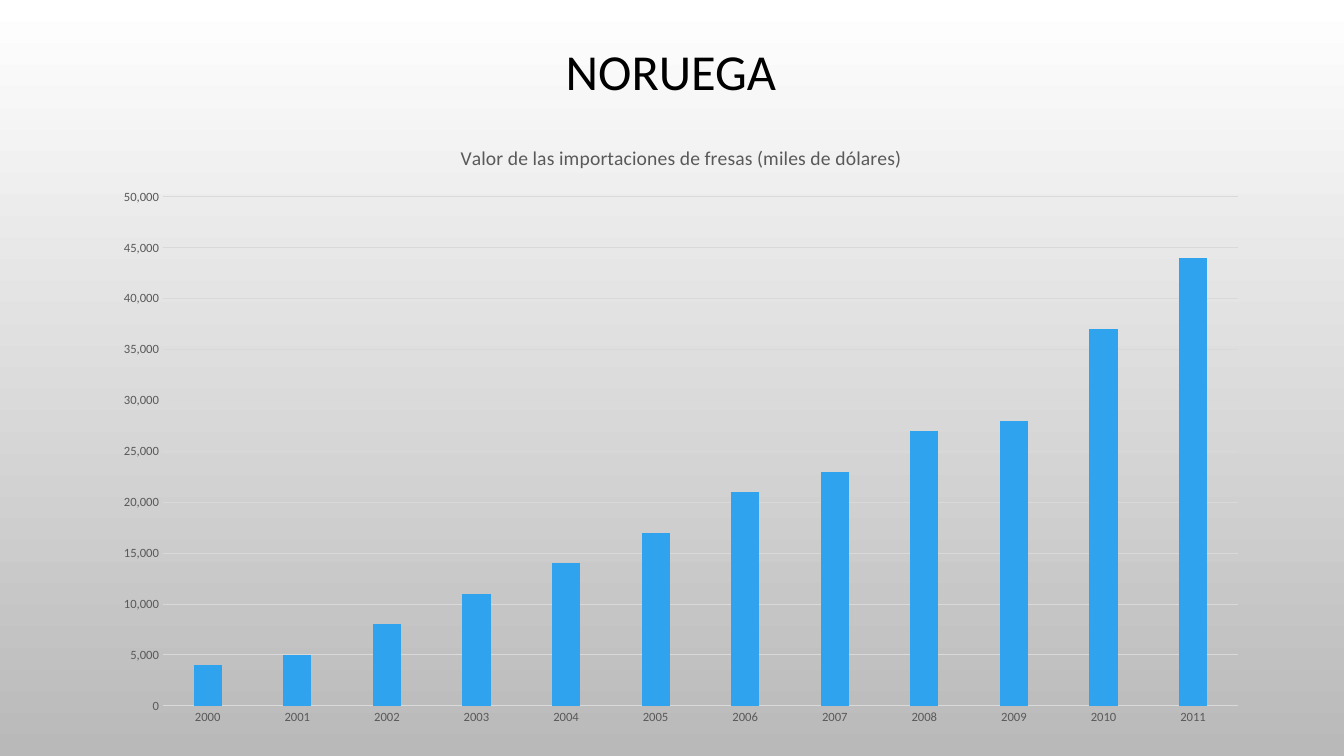
from dataclasses import dataclass

from lxml import etree
from pptx import Presentation
from pptx import util as u
from pptx.chart.data import CategoryChartData
from pptx.dml.color import RGBColor
from pptx.enum import chart as charts, text
from pptx.oxml.ns import qn

PX = u.Inches(1) / 100.8
IMPORTS = {
    2000: 4000, 2001: 5000, 2002: 8000, 2003: 11000, 2004: 14000, 2005: 17000,
    2006: 21000, 2007: 23000, 2008: 27000, 2009: 28000, 2010: 37000, 2011: 44000,
}


@dataclass(frozen=True)
class Theme:
    """Colours, font and type sizes of the slide."""
    font: str = "Calibri"
    ink: str = "000000"
    label: str = "595959"
    grid: str = "D9D9D9"
    bar: str = "2FA3EE"
    top: str = "FFFFFF"
    bottom: str = "B9B9B9"
    title_size: int = 36
    chart_title_size: int = 14
    chart_size: int = 10
    axis_size: int = 9


THEME = Theme()


def px(length):
    """Turn pixels into EMU."""
    return u.Emu(round(length * PX))


def colour(value):
    """Turn a hex string into a colour."""
    return RGBColor.from_string(value)


def style_font(font, size, value):
    """Set the theme font with a size and a colour."""
    font.name, font.size, font.bold = THEME.font, u.Pt(size), False
    font.color.rgb = colour(value)


def style_line(line):
    """Give a chart line the grid colour and weight."""
    line.color.rgb = colour(THEME.grid)
    line.width = u.Pt(0.75)


def set_layout(parent, index, **settings):
    """Place a chart part by a manual layout."""
    for old in parent.findall(qn("c:layout")):
        parent.remove(old)
    layout = etree.Element(qn("c:layout"))
    manual = etree.SubElement(layout, qn("c:manualLayout"))
    for name, value in settings.items():
        etree.SubElement(manual, qn(f"c:{name}")).set("val", str(value))
    parent.insert(index, layout)


def paint_background(page):
    """Fill the page with a vertical gradient."""
    fill = page.background.fill
    fill.gradient()
    fill.gradient_angle = 270
    for stop, value, position in zip(fill.gradient_stops, (THEME.top, THEME.bottom), (0, 1)):
        stop.color.rgb = colour(value)
        stop.position = position


def add_title(page, words, left, top, width, height):
    """Fill the title placeholder, centred in its box."""
    box = page.shapes.title
    box.left, box.top, box.width, box.height = map(px, (left, top, width, height))
    frame = box.text_frame
    frame.text = words
    frame.vertical_anchor = text.MSO_ANCHOR.MIDDLE
    para = frame.paragraphs[0]
    para.alignment = text.PP_ALIGN.CENTER
    para.line_spacing = 0.9
    style_font(para.runs[0].font, THEME.title_size, THEME.ink)


def style_axes(chart):
    """Format the year and value axes."""
    for axis in (chart.category_axis, chart.value_axis):
        axis.major_tick_mark = axis.minor_tick_mark = charts.XL_TICK_MARK.NONE
        style_font(axis.tick_labels.font, THEME.axis_size, THEME.label)
    style_line(chart.category_axis.format.line)
    values = chart.value_axis
    values.minimum_scale, values.maximum_scale, values.major_unit = 0, 50000, 5000
    values.tick_labels.number_format = "#,##0"
    values.tick_labels.number_format_is_linked = False
    values.format.line.fill.background()
    values.has_major_gridlines = True
    style_line(values.major_gridlines.format.line)


def add_imports_chart(page, words, left, top, width, height):
    """Draw the yearly imports as columns in the box."""
    data = CategoryChartData(number_format="#,##0")
    data.categories = [str(year) for year in IMPORTS]
    data.add_series("Series 1", IMPORTS.values())
    chart = page.shapes.add_chart(
        charts.XL_CHART_TYPE.COLUMN_CLUSTERED, *map(px, (left, top, width, height)), data).chart
    style_font(chart.font, THEME.chart_size, THEME.ink)
    chart.has_legend = False
    chart.has_title = True
    frame = chart.chart_title.text_frame
    frame.text = words
    style_font(frame.paragraphs[0].runs[0].font, THEME.chart_title_size, THEME.label)
    chart.chart_title.include_in_layout = False
    style_axes(chart)
    plot = chart.plots[0]
    plot.gap_width, plot.overlap, plot.vary_by_categories = 219, -27, False
    fill = plot.series[0].format.fill
    fill.solid()
    fill.fore_color.rgb = colour(THEME.bar)
    body = chart.element.find(qn("c:chart"))
    set_layout(body.find(qn("c:title")), 1, xMode="edge", yMode="edge",
               x=356 / width, y=16 / height)
    set_layout(body.find(qn("c:plotArea")), 0, layoutTarget="inner", xMode="edge", yMode="edge",
               x=62 / width, y=72 / height, w=1075 / width, h=509 / height)


def main():
    """Build and save the deck."""
    deck = Presentation()
    deck.slide_width, deck.slide_height = px(1344), px(756)
    page = deck.slides.add_slide(deck.slide_layouts.get_by_name("Title Only"))
    paint_background(page)
    add_title(page, "NORUEGA", 100, 24, 1142, 101)
    add_imports_chart(page, "Valor de las importaciones de fresas (miles de dólares)",
                      101, 125, 1160, 612)
    deck.save("out.pptx")


if __name__ == "__main__":
    main()
